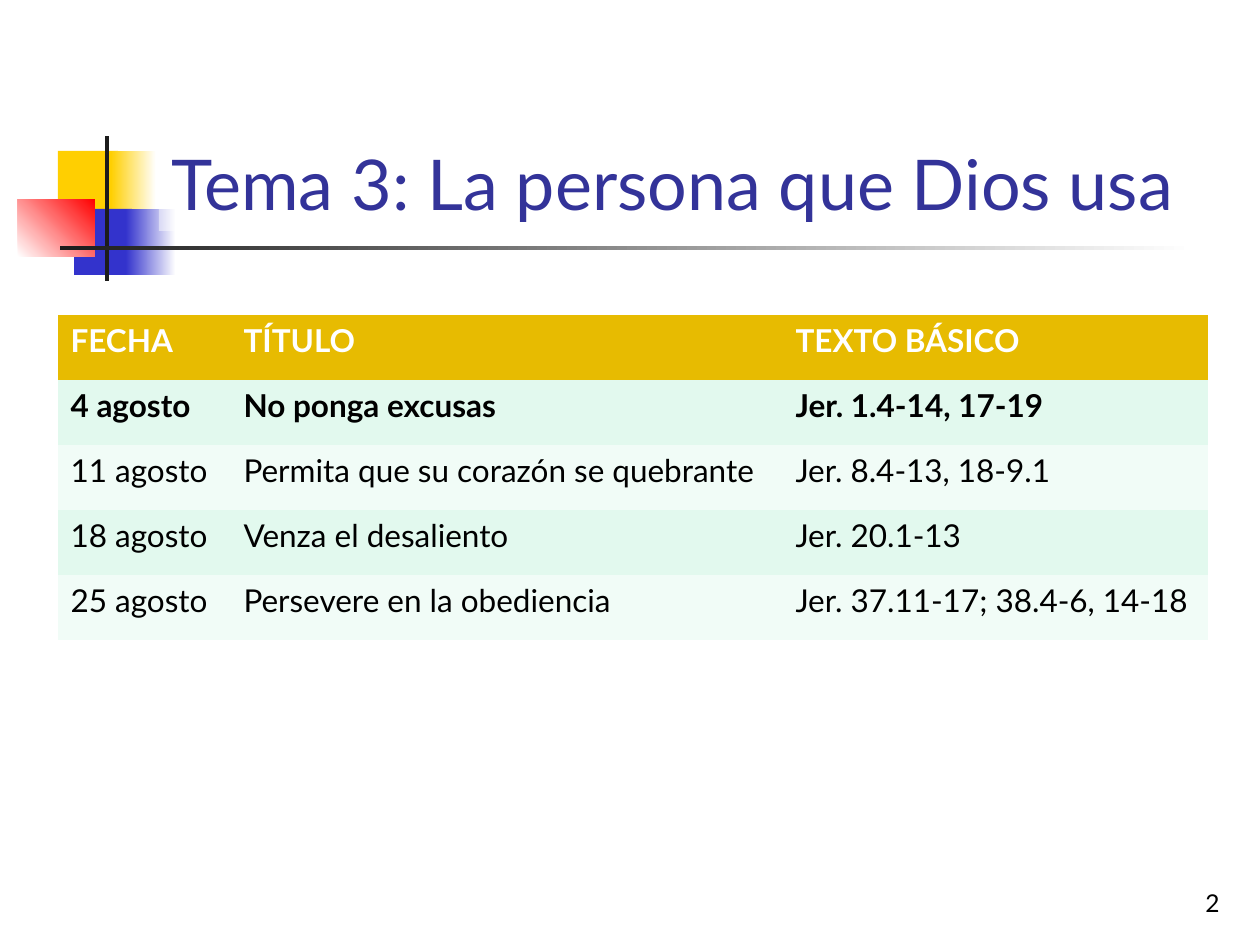
from lxml.etree import SubElement
from pptx import Presentation
from pptx.dml.color import RGBColor
from pptx.enum.shapes import MSO_SHAPE
from pptx.enum.text import MSO_ANCHOR, MSO_AUTO_SIZE, PP_ALIGN
from pptx.oxml.ns import qn
from pptx.util import Emu, Pt

EMU_PER_PX = 914400 / 126
FONT = "Lato"

WHITE = RGBColor(0xFF, 0xFF, 0xFF)
BLACK = RGBColor(0x00, 0x00, 0x00)
YELLOW = RGBColor(0xFF, 0xCF, 0x01)
BLUE = RGBColor(0x33, 0x33, 0xCC)
RED = RGBColor(0xFF, 0x00, 0x00)
CHARCOAL = RGBColor(0x1C, 0x1C, 0x1C)
TITLE_BLUE = RGBColor(0x33, 0x33, 0x99)
HEADER_GOLD = RGBColor(0xE7, 0xBB, 0x01)
BAND_DARK = RGBColor(0xE2, 0xF9, 0xEE)
BAND_LIGHT = RGBColor(0xF1, 0xFC, 0xF7)

# Box in px, start colour, end colour (None for a solid fill), gradient angle
ORNAMENTS = [
    ((58, 151, 60, 66), YELLOW, None, 0),
    ((111, 151, 45, 66), YELLOW, WHITE, 0),
    ((74, 209, 58, 66), BLUE, None, 0),
    ((126, 209, 50, 66), BLUE, WHITE, 0),
    ((18, 199, 77, 58), WHITE, RED, 45),
    ((105, 136, 4, 145), CHARCOAL, None, 0),
    ((60, 246, 1134, 4), CHARCOAL, WHITE, 0),
]

COLUMN_WIDTHS = [173, 552, 425]
ROW_HEIGHT = 65
SCHEDULE = [
    ("FECHA", "TÍTULO", "TEXTO BÁSICO"),
    ("4 agosto", "No ponga excusas", "Jer. 1.4-14, 17-19"),
    ("11 agosto", "Permita que su corazón se quebrante", "Jer. 8.4-13, 18-9.1"),
    ("18 agosto", "Venza el desaliento", "Jer. 20.1-13"),
    ("25 agosto", "Persevere en la obediencia", "Jer. 37.11-17; 38.4-6, 14-18"),
]
NO_STYLE_TABLE = "{2D5ABB26-0587-4C30-8999-92F81FD0307C}"


def px(length):
    return Emu(round(length * EMU_PER_PX))


def write(frame, text, size, color, bold=False, align=PP_ALIGN.LEFT):
    frame.text = text
    para = frame.paragraphs[0]
    para.alignment = align
    para.font.name = FONT
    para.font.size = Pt(size)
    para.font.bold = bold
    para.font.color.rgb = color


def add_ornament(page, box, start, end, angle):
    shape = page.shapes.add_shape(MSO_SHAPE.RECTANGLE, *map(px, box))
    shape.shadow.inherit = False
    shape.line.fill.background()
    if end is None:
        shape.fill.solid()
        shape.fill.fore_color.rgb = start
        return
    shape.fill.gradient()
    shape.fill.gradient_angle = angle
    for stop, color in zip(shape.fill.gradient_stops, (start, end)):
        stop.color.rgb = color


def format_title(page, text):
    """Place the title over the ornaments on a translucent white panel."""
    title = page.shapes.title
    title.element.getparent().append(title.element)
    title.left, title.top, title.width, title.height = map(px, (159, 29, 1074, 202))
    title.fill.solid()
    title.fill.fore_color.rgb = WHITE
    panel_color = title.element.spPr.find(".//" + qn("a:srgbClr"))
    SubElement(panel_color, qn("a:alpha"), val="45000")
    frame = title.text_frame
    frame.auto_size = MSO_AUTO_SIZE.NONE
    frame.vertical_anchor = MSO_ANCHOR.BOTTOM
    write(frame, text, 40, TITLE_BLUE)


def add_page_number(page, number):
    box = page.shapes.add_textbox(*map(px, (970, 861, 262, 63)))
    frame = box.text_frame
    frame.word_wrap = True
    frame.vertical_anchor = MSO_ANCHOR.BOTTOM
    write(frame, number, 14, BLACK, align=PP_ALIGN.RIGHT)


def add_schedule(page):
    size = sum(COLUMN_WIDTHS), ROW_HEIGHT * len(SCHEDULE)
    holder = page.shapes.add_table(
        len(SCHEDULE), len(COLUMN_WIDTHS), *map(px, (58, 315, *size)))
    table = holder.table
    holder.element.find(".//" + qn("a:tableStyleId")).text = NO_STYLE_TABLE
    for column, width in zip(table.columns, COLUMN_WIDTHS):
        column.width = px(width)
    for index, texts in enumerate(SCHEDULE):
        table.rows[index].height = px(ROW_HEIGHT)
        band = BAND_DARK if index % 2 else BAND_LIGHT
        for cell, text in zip(table.rows[index].cells, texts):
            cell.fill.solid()
            cell.fill.fore_color.rgb = band if index else HEADER_GOLD
            write(cell.text_frame, text, 18, BLACK if index else WHITE,
                  bold=index < 2)


def main():
    deck = Presentation()
    deck.slide_width, deck.slide_height = px(1260), px(945)
    page = deck.slides.add_slide(deck.slide_layouts.get_by_name("Title Only"))
    for ornament in ORNAMENTS:
        add_ornament(page, *ornament)
    format_title(page, "Tema 3: La persona que Dios usa")
    add_page_number(page, "2")
    add_schedule(page)
    deck.save("out.pptx")


if __name__ == "__main__":
    main()
